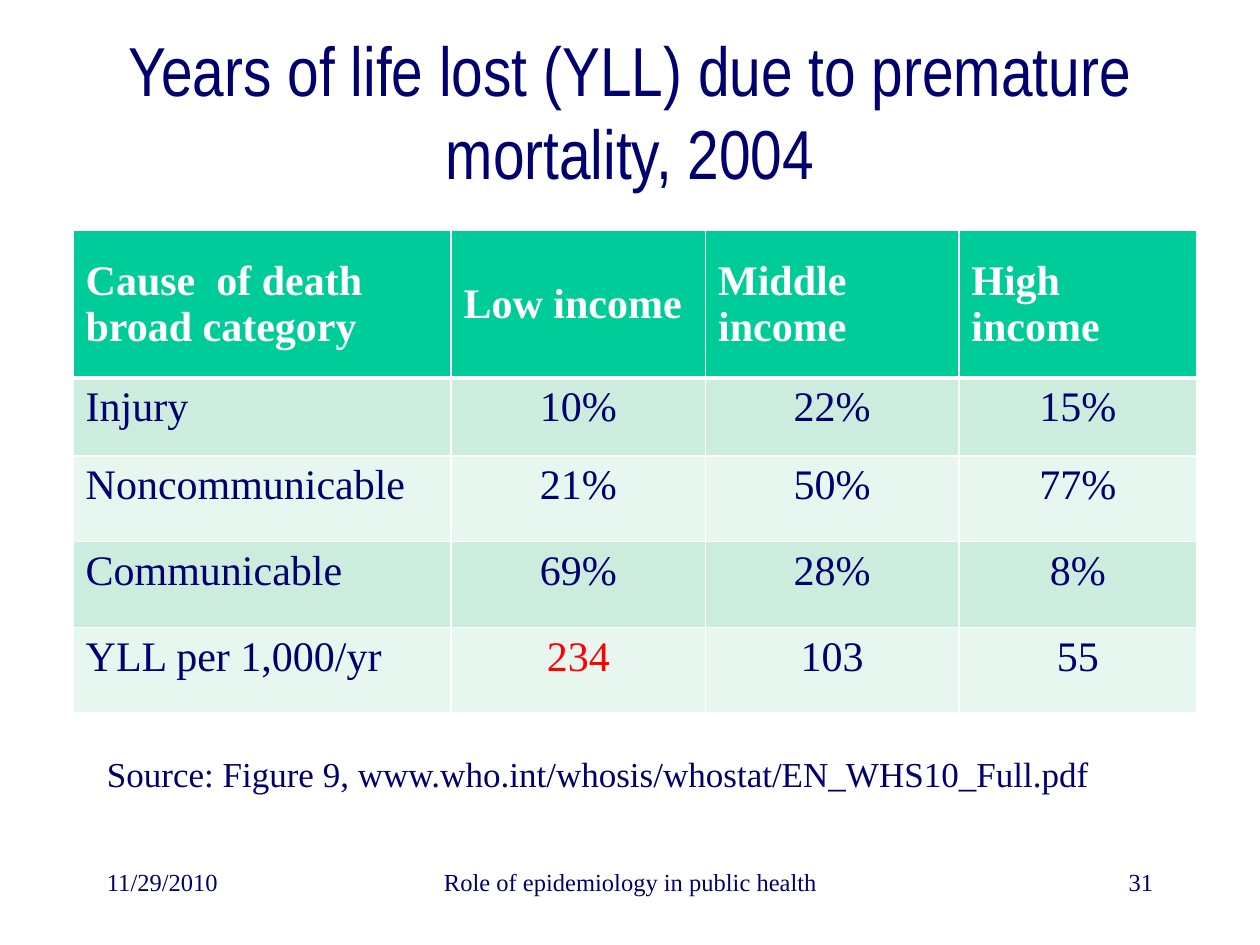
from lxml import etree
from pptx import Presentation
from pptx.dml.color import RGBColor
from pptx.enum import text
from pptx.oxml import ns
from pptx.util import Inches, Pt

NAVY, WHITE, RED = "00006E", "FFFFFF", "FF0000"
HEADER, BANDS = "00CC99", ("CCECDE", "E7F6EF")
LEFT, CENTER, RIGHT = text.PP_ALIGN.LEFT, text.PP_ALIGN.CENTER, text.PP_ALIGN.RIGHT
MIDDLE, TOP = text.MSO_ANCHOR.MIDDLE, text.MSO_ANCHOR.TOP

COLUMN_WIDTHS = (3, 2.02, 2.01, 1.89)
ROW_HEIGHTS = (1.17, 0.62, 0.68, 0.68, 0.68)
ROWS = (
    ("Cause  of death broad category", "Low income", "Middle income", "High income"),
    ("Injury", "10%", "22%", "15%"),
    ("Noncommunicable", "21%", "50%", "77%"),
    ("Communicable", "69%", "28%", "8%"),
    ("YLL per 1,000/yr", "234", "103", "55"),
)
HIGHLIGHT = (4, 1)


def color(code):
    return RGBColor.from_string(code)


def set_border(cell, side, width):
    """Draw one white cell edge; side is L, R, T or B."""
    line = etree.SubElement(cell._tc.get_or_add_tcPr(), ns.qn(f"a:ln{side}"), w=str(Pt(width)))
    fill = etree.SubElement(line, ns.qn("a:solidFill"))
    etree.SubElement(fill, ns.qn("a:srgbClr"), val=WHITE)


class SlideBuilder:
    """Holds the text style and the current slide."""

    font = "Times New Roman"
    title_font = "Arial Narrow"

    def __init__(self, deck):
        self.slide = deck.slides.add_slide(deck.slide_layouts[5])

    def set_text(self, frame, words, size, align=LEFT, ink=NAVY, font=None, bold=False):
        frame.text = words
        para = frame.paragraphs[0]
        para.alignment = align
        for span in para.runs:
            span.font.name = font or self.font
            span.font.size = Pt(size)
            span.font.bold = bold
            span.font.color.rgb = color(ink)

    def title(self, words, left, top, width, height):
        box = self.slide.shapes.title
        box.left, box.top = Inches(left), Inches(top)
        box.width, box.height = Inches(width), Inches(height)
        frame = box.text_frame
        frame.word_wrap = True
        frame.auto_size = text.MSO_AUTO_SIZE.NONE
        frame.vertical_anchor = MIDDLE
        self.set_text(frame, words, 39.6, CENTER, font=self.title_font)

    def label(self, words, left, top, width, height, size, align=LEFT):
        box = self.slide.shapes.add_textbox(
            Inches(left), Inches(top), Inches(width), Inches(height))
        box.text_frame.word_wrap = True
        self.set_text(box.text_frame, words, size, align)

    def table(self, rows, left, top, widths, heights, highlight):
        table = self.slide.shapes.add_table(
            len(rows), len(widths), Inches(left), Inches(top),
            Inches(sum(widths)), Inches(sum(heights))).table
        for column, width in zip(table.columns, widths):
            column.width = Inches(width)
        for row, height in zip(table.rows, heights):
            row.height = Inches(height)
        for r, row in enumerate(rows):
            for c, words in enumerate(row):
                self.cell(table.cell(r, c), words, r, c, (r, c) == highlight)

    def cell(self, cell, words, row, column, highlighted):
        header = row == 0
        ink = WHITE if header else RED if highlighted else NAVY
        align = LEFT if header or column == 0 else CENTER
        self.set_text(cell.text_frame, words, 24, align, ink, bold=header)
        cell.vertical_anchor = MIDDLE if header else TOP
        for side in "LRTB":
            thick = (row, side) in ((0, "B"), (1, "T"))
            set_border(cell, side, 3 if thick else 1)
        cell.fill.solid()
        cell.fill.fore_color.rgb = color(HEADER if header else BANDS[(row - 1) % 2])


def main():
    deck = Presentation()
    deck.slide_width, deck.slide_height = Inches(10), Inches(7.5)
    page = SlideBuilder(deck)
    page.title("Years of life lost (YLL) due to premature mortality, 2004", 0.75, 0.25, 8.5, 1.25)
    page.table(ROWS, 0.58, 1.83, COLUMN_WIDTHS, ROW_HEIGHTS, HIGHLIGHT)
    page.label("Source: Figure 9, www.who.int/whosis/whostat/EN_WHS10_Full.pdf",
               0.75, 5.92, 8.83, 0.44, 20)
    for words, left, width, align in (
        ("11/29/2010", 0.75, 2.08, LEFT),
        ("Role of epidemiology in public health", 3.42, 3.17, CENTER),
        ("31", 7.17, 2.08, RIGHT),
    ):
        page.label(words, left, 6.83, width, 0.5, 14, align)
    deck.save("out.pptx")


if __name__ == "__main__":
    main()
